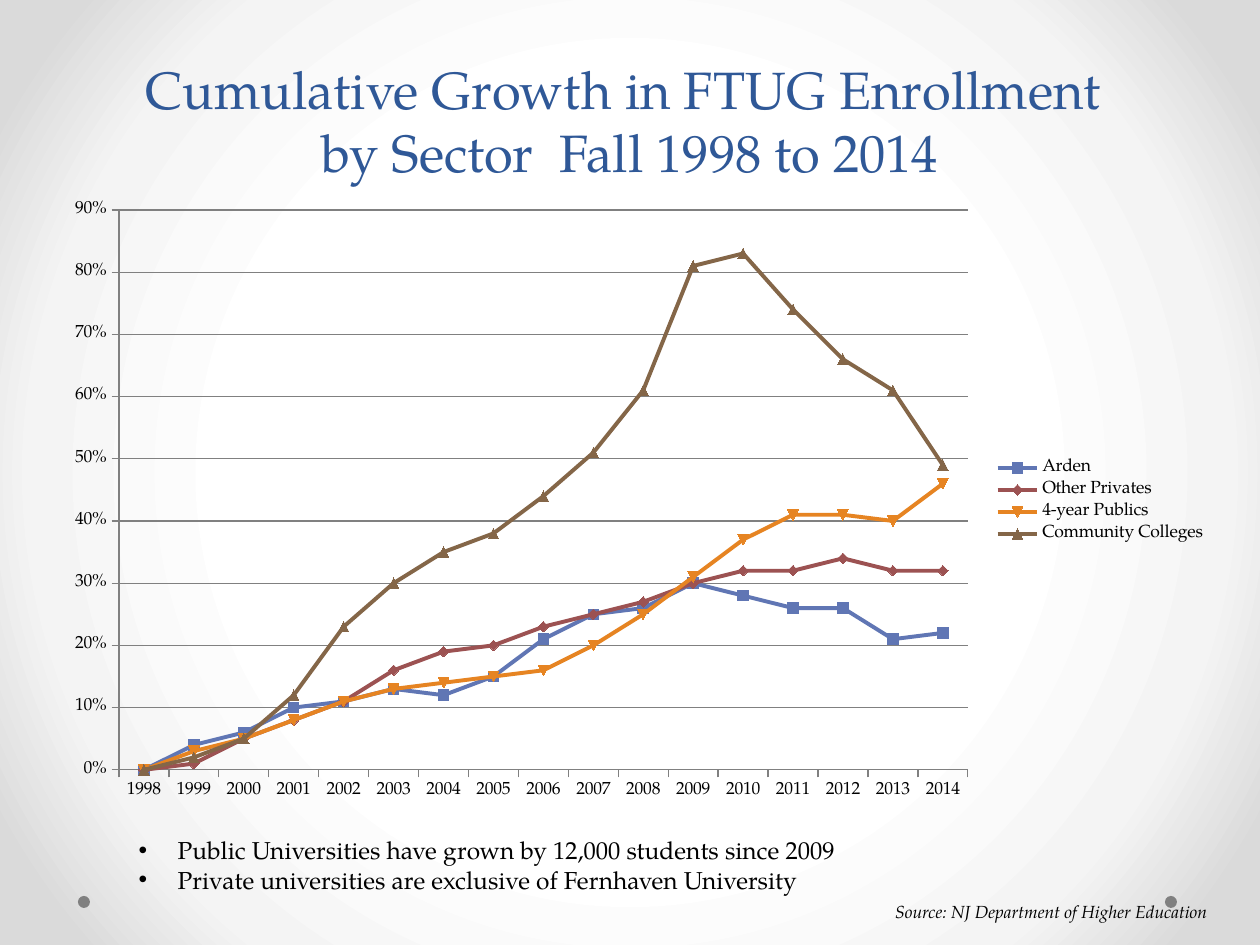
from lxml.etree import SubElement
from pptx import Presentation
from pptx.chart.data import CategoryChartData
from pptx.dml.color import RGBColor
from pptx.enum.chart import XL_CHART_TYPE, XL_LEGEND_POSITION, XL_TICK_MARK
from pptx.enum.shapes import MSO_SHAPE
from pptx.enum.text import MSO_ANCHOR, PP_ALIGN
from pptx.oxml import parse_xml
from pptx.oxml.ns import nsdecls, qn
from pptx.util import Pt

PX = 914400 / 126
FACE = "TeX Gyre Pagella"
GREY = "808080"
SERIES = [
    ("Arden", "6076B4", [0, 4, 6, 10, 11, 13, 12, 15, 21, 25, 26, 30, 28, 26, 26, 21, 22]),
    ("Other Privates", "9C5252", [0, 1, 5, 8, 11, 16, 19, 20, 23, 25, 27, 30, 32, 32, 34, 32, 32]),
    ("4-year Publics", "E68422", [0, 3, 5, 8, 11, 13, 14, 15, 16, 20, 25, 31, 37, 41, 41, 40, 46]),
    ("Community Colleges", "846648",
     [0, 2, 5, 12, 23, 30, 35, 38, 44, 51, 61, 81, 83, 74, 66, 61, 49]),
]


def px(num):
    """Turn pixels into EMU."""
    return round(num * PX)


def tint(code):
    """Turn a hex string into a colour."""
    return RGBColor.from_string(code)


def put(item, **vals):
    """Set each named value on an item."""
    for name, val in vals.items():
        setattr(item, name, val)


class Deck:
    """Hold the style and the current slide."""

    def __init__(self, wide, high):
        """Start a deck with one titled slide."""
        self.file = Presentation()
        put(self.file, slide_width=px(wide), slide_height=px(high))
        self.slide = self.file.slides.add_slide(self.file.slide_layouts[1])

    def place(self, shape, left, top, wide, high):
        """Move and size a shape."""
        put(shape, left=px(left), top=px(top), width=px(wide), height=px(high))

    def font(self, font, size, code="000000", **more):
        """Style a font."""
        put(font, name=FACE, size=Pt(size), **more)
        font.color.rgb = tint(code)

    def back(self, stops):
        """Fill the background with a round gradient."""
        fill = self.slide.background.fill
        fill.gradient()
        marks = "".join(
            f'<a:gs pos="{pos * 1000}"><a:srgbClr val="{code}"/></a:gs>' for pos, code in stops)
        new = parse_xml(
            f'<a:gradFill {nsdecls("a")} rotWithShape="1"><a:gsLst>{marks}</a:gsLst>'
            '<a:path path="circle"><a:fillToRect l="50000" t="50000" r="50000" b="50000"/>'
            '</a:path></a:gradFill>')
        old = next(self.slide.element.iter(qn("a:gradFill")))
        old.getparent().replace(old, new)

    def dot(self, left, top, size):
        """Add a plain round dot."""
        shape = self.slide.shapes.add_shape(
            MSO_SHAPE.OVAL, px(left), px(top), px(size), px(size))
        shape.shadow.inherit = False
        shape.fill.solid()
        shape.fill.fore_color.rgb = tint(GREY)
        shape.line.fill.background()

    def title(self, text, *box):
        """Fill the title."""
        shape = self.slide.shapes.title
        self.place(shape, *box)
        frame = shape.text_frame
        put(frame, text=text, vertical_anchor=MSO_ANCHOR.BOTTOM, word_wrap=True)
        para = frame.paragraphs[0]
        para.alignment = PP_ALIGN.CENTER
        for run in para.runs:
            self.font(run.font, 30, "2F5897")

    def body(self, items, source, *box):
        """Fill the body with bullets and a source line."""
        shape = self.slide.placeholders[1]
        self.place(shape, *box)
        frame = shape.text_frame
        put(frame, text="\n".join([*items, source]), word_wrap=True, margin_right=px(21))
        for para in frame.paragraphs:
            put(para, space_before=Pt(0), space_after=Pt(0))
            self.font(para.runs[0].font, 14)
            props = para._p.get_or_add_pPr()
            last = para.text == source
            inset = 0 if last else px(39)
            props.set("marL", str(inset))
            props.set("indent", str(-inset))
            if last:
                SubElement(props, qn("a:buNone"))
            else:
                SubElement(props, qn("a:buChar")).set("char", "•")
        put(para, alignment=PP_ALIGN.RIGHT, space_before=Pt(4))
        self.font(para.runs[0].font, 10, italic=True)

    def chart(self, cats, rows, box, plot):
        """Add a line chart with its plot at a fixed place."""
        data = CategoryChartData(number_format="0%")
        data.categories = cats
        for name, _, vals in rows:
            data.add_series(name, [val / 100 for val in vals])
        chart = self.slide.shapes.add_chart(
            XL_CHART_TYPE.LINE_MARKERS, *map(px, box), data).chart
        put(chart, has_title=False, has_legend=True)
        self.font(chart.font, 10)
        put(chart.legend, position=XL_LEGEND_POSITION.RIGHT, include_in_layout=False)
        chart.plots[0].vary_by_categories = False
        for line, (_, code, _) in zip(chart.plots[0].series, rows):
            line.smooth = False
            line.format.line.width = Pt(2.25)
            line.format.line.color.rgb = tint(code)
            mark = line.marker
            mark.size = 6
            mark.format.fill.solid()
            mark.format.fill.fore_color.rgb = tint(code)
            mark.format.line.color.rgb = tint(code)
        axis = chart.value_axis
        put(axis, minimum_scale=0, maximum_scale=0.9, major_unit=0.1, has_major_gridlines=True)
        put(axis.tick_labels, number_format="0%", number_format_is_linked=False)
        for each in (axis, chart.category_axis):
            put(each, major_tick_mark=XL_TICK_MARK.OUTSIDE, minor_tick_mark=XL_TICK_MARK.NONE)
        for each in (axis, chart.category_axis, axis.major_gridlines):
            each.format.line.width = Pt(0.75)
            each.format.line.color.rgb = tint(GREY)
        left, top, wide, high = box
        parts = {"x": (plot[0] - left) / wide, "y": (plot[1] - top) / high,
                 "w": plot[2] / wide, "h": plot[3] / high}
        area = chart._chartSpace.chart.plotArea
        for old in area.findall(qn("c:layout")):
            area.remove(old)
        modes = '<c:layoutTarget val="inner"/><c:xMode val="edge"/><c:yMode val="edge"/>'
        sizes = "".join(f'<c:{key} val="{val:.4f}"/>' for key, val in parts.items())
        area.insert(0, parse_xml(
            f'<c:layout {nsdecls("c")}><c:manualLayout>{modes}{sizes}'
            '</c:manualLayout></c:layout>'))


def main():
    """Build and save the slide."""
    deck = Deck(1260, 945)
    deck.back([(50, "FFFFFF"), (76, "F4F4F4"), (92, "DADADA")])
    for left in (1165, 78):
        deck.dot(left, 896, 12)
    deck.title("Cumulative Growth in FTUG Enrollment \vby Sector  Fall 1998 to 2014",
               63, 32, 1134, 157)
    deck.body(["Public Universities have grown by 12,000 students since 2009",
               "Private universities are exclusive of Fernhaven University"],
              "Source: NJ Department of Higher Education", 126, 829, 1102, 102)
    deck.chart([str(year) for year in range(1998, 2015)], SERIES,
               (53, 189, 1166, 624), (119, 210, 849, 560))
    deck.file.save("out.pptx")


if __name__ == "__main__":
    main()
